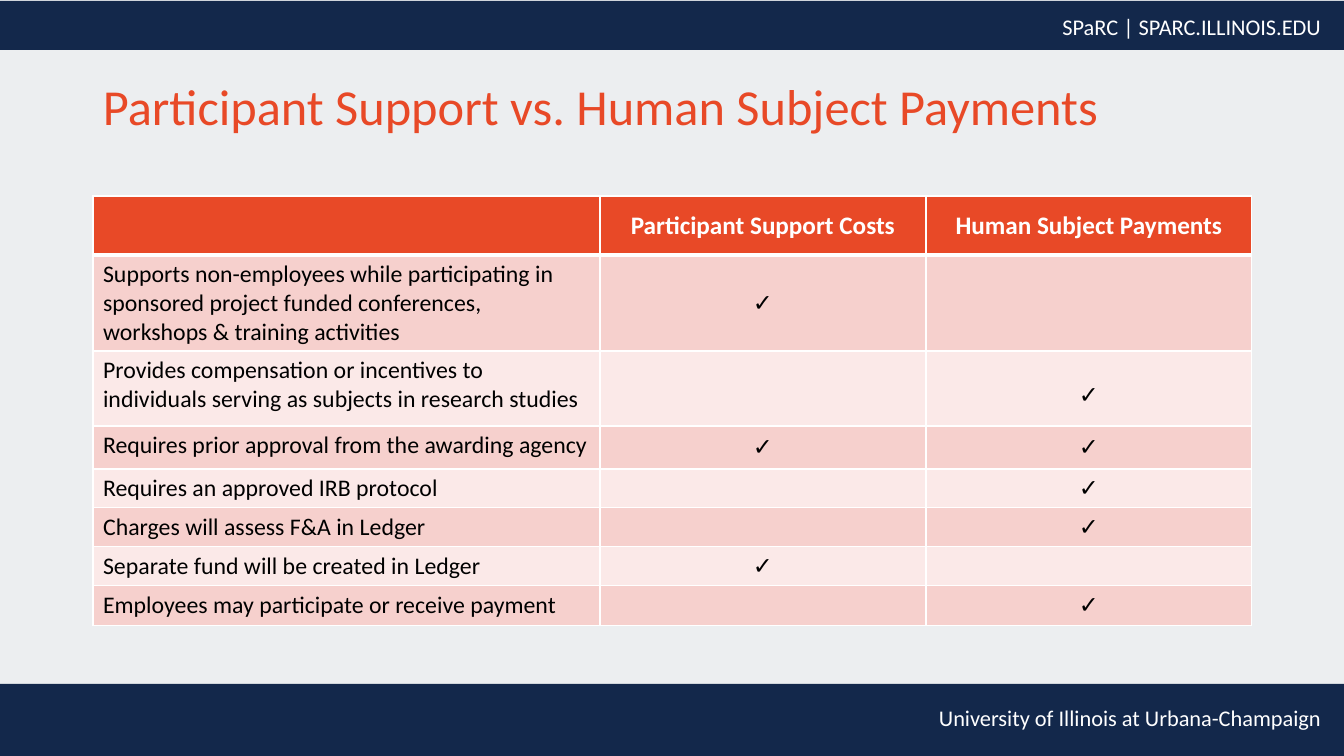
from lxml import etree
from pptx import Presentation
from pptx import util as u
from pptx.dml.color import RGBColor
from pptx.enum import shapes, text
from pptx.oxml import ns

PX = 914400 / 100.8
NAVY = RGBColor(0x13, 0x28, 0x4B)
ORANGE = RGBColor(0xE8, 0x49, 0x27)
ROSE = RGBColor(0xF6, 0xD0, 0xCD)
BLUSH = RGBColor(0xFB, 0xE9, 0xE8)
MIST = RGBColor(0xEC, 0xEE, 0xF0)
WHITE = RGBColor(0xFF, 0xFF, 0xFF)
BLACK = RGBColor(0, 0, 0)

LEFT, MID, RIGHT = text.PP_ALIGN.LEFT, text.PP_ALIGN.CENTER, text.PP_ALIGN.RIGHT
COLS = [507, 326, 326]
HEAD = ["", "Participant Support Costs", "Human Subject Payments"]
# label, support costs tick, subject payments tick, row height
ROWS = [
    ("Supports non-employees while participating in sponsored project funded "
     "conferences, workshops & training activities", True, False, 96),
    ("Provides compensation or incentives to individuals serving as subjects "
     "in research studies", False, True, 75),
    ("Requires prior approval from the awarding agency", True, True, 43),
    ("Requires an approved IRB protocol", False, True, 39),
    ("Charges will assess F&A in Ledger", False, True, 38),
    ("Separate fund will be created in Ledger", True, False, 37),
    ("Employees may participate or receive payment", False, True, 40),
]
HEAD_H = 59
TALL_ROW = 2  # its tick has wider line spacing


def px(*nums):
    return [u.Emu(round(n * PX)) for n in nums]


def write(frame, words, size, color, align=LEFT, bold=False, gap=None):
    para = frame.paragraphs[0]
    para.alignment = align
    if gap:
        para.line_spacing = gap
    if not words:  # an empty cell still needs a text size to keep its row low
        etree.SubElement(para._p, ns.qn("a:endParaRPr"), sz=str(size * 100))
        return
    run = para.add_run()
    run.text = words
    for key, val in {"name": "Calibri", "size": u.Pt(size), "bold": bold}.items():
        setattr(run.font, key, val)
    run.font.color.rgb = color


def add_text(slide, box, words, size, color, **opts):
    frame = slide.shapes.add_textbox(*px(*box)).text_frame
    frame.word_wrap = True
    write(frame, words, size, color, **opts)


def add_band(slide, box, words, wide, drop):
    """Navy strip with a right-aligned label, drop px below its top."""
    x, y, w, h = box
    bar = slide.shapes.add_shape(shapes.MSO_SHAPE.RECTANGLE, *px(*box))
    bar.shadow.inherit = False
    bar.fill.solid()
    bar.fill.fore_color.rgb = NAVY
    bar.line.fill.background()
    label = (x + w - 13 - wide, y + drop, wide, 37)
    add_text(slide, label, words, 16, WHITE, align=RIGHT)


def set_edges(cell, top, base):
    props = cell._tc.get_or_add_tcPr()
    for side, width in {"L": 1, "R": 1, "T": top, "B": base}.items():
        line = etree.SubElement(props, ns.qn("a:ln" + side), w=str(u.Pt(width)))
        fill = etree.SubElement(line, ns.qn("a:solidFill"))
        etree.SubElement(fill, ns.qn("a:srgbClr"), val=str(WHITE))


def add_grid(slide, x, y):
    highs = [HEAD_H] + [row[3] for row in ROWS]
    box = px(x, y, sum(COLS), sum(highs))
    grid = slide.shapes.add_table(len(highs), len(COLS), *box).table
    for col, wide in zip(grid.columns, px(*COLS)):
        col.width = wide
    for row, high in zip(grid.rows, px(*highs)):
        row.height = high
    lines = [HEAD] + [[row[0]] + ["✓" if tick else "" for tick in row[1:3]]
                      for row in ROWS]
    for r, line in enumerate(lines):
        head = r == 0
        tint = ORANGE if head else (ROSE if r % 2 else BLUSH)
        for c, words in enumerate(line):
            cell = grid.cell(r, c)
            set_edges(cell, 3 if r == 1 else 1, 3 if head else 1)
            cell.fill.solid()
            cell.fill.fore_color.rgb = tint
            if c:
                cell.vertical_anchor = text.MSO_ANCHOR.MIDDLE
            gap = 1.5 if r == TALL_ROW and words == "✓" else None
            write(cell.text_frame, words, 18 if head else 17,
                  WHITE if head else BLACK, MID if c else LEFT, head, gap)


def main():
    deck = Presentation()
    deck.slide_width, deck.slide_height = px(1344, 756)
    slide = deck.slides.add_slide(deck.slide_layouts[6])
    slide.background.fill.solid()
    slide.background.fill.fore_color.rgb = MIST
    add_band(slide, (0, 684, 1344, 72),
             "University of Illinois at Urbana-Champaign", 461, 15)
    add_band(slide, (0, 1, 1344, 49), "SPaRC | SPARC.ILLINOIS.EDU", 761, 7)
    add_text(slide, (93, 77, 1159, 109),
             "Participant Support vs. Human Subject Payments", 36, ORANGE, gap=0.9)
    add_grid(slide, 93, 196)
    deck.save("out.pptx")


if __name__ == "__main__":
    main()
